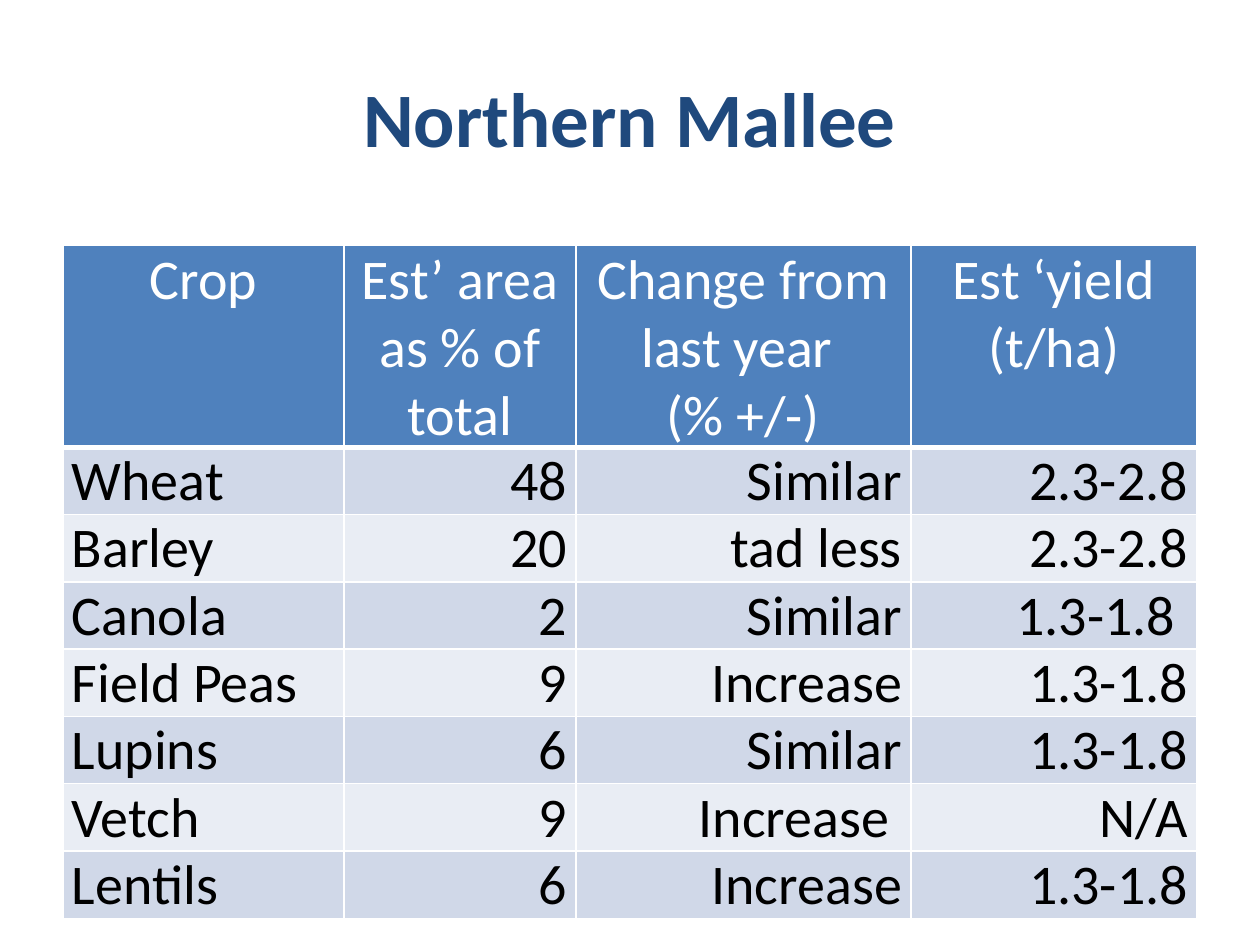
from lxml import etree
from pptx import Presentation
from pptx import util as u
from pptx.dml.color import RGBColor
from pptx.enum import text
from pptx.oxml import ns

# Content
TITLE = "Northern Mallee"
HEADERS = ["Crop", "Est’ area as % of total", "Change from last year \n(% +/-)", "Est ‘yield (t/ha)"]
CROPS = [
    ("Wheat", "48", "Similar", "2.3-2.8"),
    ("Barley", "20", " tad less", "2.3-2.8"),
    ("Canola", "2", "Similar", "1.3-1.8 "),
    ("Field Peas", "9", "Increase", "1.3-1.8"),
    ("Lupins", "6", "Similar", "1.3-1.8"),
    ("Vetch", "9", "Increase ", "N/A"),
    ("Lentils", "6", "Increase", "1.3-1.8"),
]

# Style
FONT = "Calibri"
NAVY = RGBColor(0x1F, 0x49, 0x7D)
BLUE = RGBColor(0x4F, 0x81, 0xBD)
WHITE = RGBColor(0xFF, 0xFF, 0xFF)
BLACK = RGBColor(0, 0, 0)
BANDS = [RGBColor(0xD0, 0xD8, 0xE8), RGBColor(0xE9, 0xED, 0xF4)]
LEFT, CENTER, RIGHT = text.PP_ALIGN.LEFT, text.PP_ALIGN.CENTER, text.PP_ALIGN.RIGHT

COLUMN_WIDTHS = [2.23, 1.84, 2.66, 2.27]
HEADER_HEIGHT, ROW_HEIGHT = 1.57, 0.53


def write(frame, content, size=32, color=BLACK, bold=False, align=LEFT):
    frame.word_wrap = True
    frame.text = content
    for paragraph in frame.paragraphs:
        paragraph.alignment = align
        font = paragraph.font
        for run in paragraph.runs:
            font = run.font
            font.name, font.size, font.bold = FONT, u.Pt(size), bold
            font.color.rgb = color


def set_borders(cell, **widths):
    """Draw white borders; widths in points by side: L, R, T, B."""
    properties = cell._tc.get_or_add_tcPr()
    for side, width in widths.items():
        line = etree.SubElement(properties, ns.qn(f"a:ln{side}"), w=str(u.Pt(width)))
        fill = etree.SubElement(line, ns.qn("a:solidFill"))
        etree.SubElement(fill, ns.qn("a:srgbClr"), val=str(WHITE))


presentation = Presentation()
presentation.slide_width, presentation.slide_height = u.Inches(10), u.Inches(7.5)
slide = presentation.slides.add_slide(presentation.slide_layouts[6])

# Title
title = slide.shapes.add_textbox(u.Inches(0.5), u.Inches(0.3), u.Inches(9), u.Inches(1.25))
title.text_frame.vertical_anchor = text.MSO_ANCHOR.MIDDLE
write(title.text_frame, TITLE, size=44, color=NAVY, bold=True, align=CENTER)

# Crop table
rows = [HEADERS, *CROPS]
heights = [HEADER_HEIGHT] + [ROW_HEIGHT] * len(CROPS)
table = slide.shapes.add_table(
    len(rows), len(HEADERS), u.Inches(0.5), u.Inches(1.95),
    u.Inches(sum(COLUMN_WIDTHS)), u.Inches(sum(heights))).table
for column, width in zip(table.columns, COLUMN_WIDTHS):
    column.width = u.Inches(width)

for row_index, values in enumerate(rows):
    table.rows[row_index].height = u.Inches(heights[row_index])
    is_header = row_index == 0
    for column_index, value in enumerate(values):
        cell = table.cell(row_index, column_index)
        cell.margin_left = cell.margin_right = u.Inches(0.07)
        cell.margin_top = cell.margin_bottom = 0
        set_borders(cell, L=1, R=1, T=3 if row_index == 1 else 1, B=3 if is_header else 1)
        cell.fill.solid()
        cell.fill.fore_color.rgb = BLUE if is_header else BANDS[(row_index - 1) % 2]
        if is_header:
            write(cell.text_frame, value, color=WHITE, align=CENTER)
        else:
            write(cell.text_frame, value, align=RIGHT if column_index else LEFT)

presentation.save("out.pptx")
